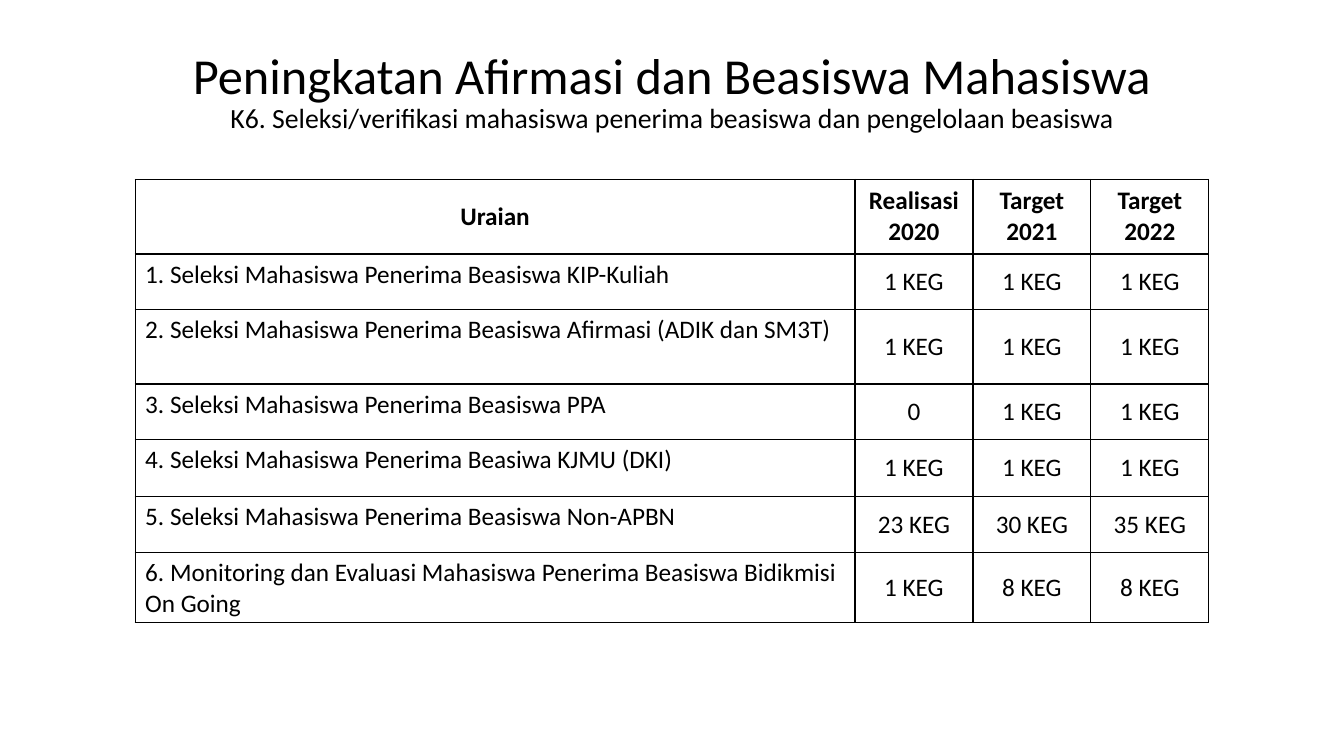
from dataclasses import dataclass

from lxml import etree
from pptx import Presentation
from pptx.dml.color import RGBColor
from pptx.enum.text import MSO_ANCHOR as ANCHOR, PP_ALIGN as ALIGN
from pptx.oxml.ns import qn
from pptx.util import Inches, Pt


@dataclass(frozen=True)
class Theme:
    font: str = "Calibri"
    ink: str = "000000"
    paper: str = "FFFFFF"
    title: float = 36
    subtitle: float = 19.8
    body: float = 18
    border: float = 1


THEME = Theme()

TITLE = "Peningkatan Afirmasi dan Beasiswa Mahasiswa"
SUBTITLE = "K6. Seleksi/verifikasi mahasiswa penerima beasiswa dan pengelolaan beasiswa"
HEADER = ["Uraian", "Realisasi\n2020", "Target\n2021", "Target\n2022"]
ACTIVITIES = [
    ["1. Seleksi Mahasiswa Penerima Beasiswa KIP-Kuliah", "1 KEG", "1 KEG", "1 KEG"],
    ["2. Seleksi Mahasiswa Penerima Beasiswa Afirmasi (ADIK dan SM3T)", "1 KEG", "1 KEG", "1 KEG"],
    ["3. Seleksi Mahasiswa Penerima Beasiswa PPA", "0", "1 KEG", "1 KEG"],
    ["4. Seleksi Mahasiswa Penerima Beasiwa KJMU (DKI)", "1 KEG", "1 KEG", "1 KEG"],
    ["5. Seleksi Mahasiswa Penerima Beasiswa Non-APBN", "23 KEG", "30 KEG", "35 KEG"],
    ["6. Monitoring dan Evaluasi Mahasiswa Penerima Beasiswa Bidikmisi On Going",
     "1 KEG", "8 KEG", "8 KEG"],
]
COL_WIDTHS = [7.14, 1.17, 1.17, 1.17]
ROW_HEIGHTS = [0.74, 0.55, 0.74, 0.55, 0.57, 0.55, 0.55]


def add_run(p, text, size=THEME.body, bold=False):
    r = p.add_run()
    r.text = text
    r.font.name = THEME.font
    r.font.size = Pt(size)
    r.font.bold = bold
    r.font.color.rgb = RGBColor.from_string(THEME.ink)


def set_borders(cell):
    """Draw all four edges; they must come before the cell's fill."""
    tc_pr = cell._tc.get_or_add_tcPr()
    for i, edge in enumerate(("lnL", "lnR", "lnT", "lnB")):
        ln = etree.Element(qn(f"a:{edge}"), w=str(Pt(THEME.border)))
        fill = etree.SubElement(ln, qn("a:solidFill"))
        etree.SubElement(fill, qn("a:srgbClr"), val=THEME.ink)
        tc_pr.insert(i, ln)


def add_heading(slide, left, top, width, height):
    box = slide.shapes.add_textbox(Inches(left), Inches(top), Inches(width), Inches(height))
    tf = box.text_frame
    tf.word_wrap = True
    tf.vertical_anchor = ANCHOR.MIDDLE
    p = tf.paragraphs[0]
    p.alignment = ALIGN.CENTER
    p.line_spacing = 0.9
    add_run(p, TITLE, size=THEME.title)
    p.add_line_break()
    add_run(p, SUBTITLE, size=THEME.subtitle)


def fill_cell(cell, text, header=False, centered=True):
    cell.fill.solid()
    cell.fill.fore_color.rgb = RGBColor.from_string(THEME.paper)
    set_borders(cell)
    cell.vertical_anchor = ANCHOR.MIDDLE if centered else ANCHOR.TOP
    tf = cell.text_frame
    for i, line in enumerate(text.split("\n")):
        p = tf.add_paragraph() if i else tf.paragraphs[0]
        p.alignment = ALIGN.CENTER if centered else ALIGN.LEFT
        add_run(p, line, bold=header)


def add_activity_table(slide, left, top):
    rows = [HEADER] + ACTIVITIES
    frame = slide.shapes.add_table(
        len(rows), len(HEADER), Inches(left), Inches(top),
        Inches(sum(COL_WIDTHS)), Inches(sum(ROW_HEIGHTS)))
    table = frame.table
    table.horz_banding = False
    for col, width in zip(table.columns, COL_WIDTHS):
        col.width = Inches(width)
    for row, height in zip(table.rows, ROW_HEIGHTS):
        row.height = Inches(height)
    for i, values in enumerate(rows):
        for j, text in enumerate(values):
            header = i == 0
            fill_cell(table.cell(i, j), text, header=header, centered=header or j > 0)


def main():
    prs = Presentation()
    prs.slide_width, prs.slide_height = Inches(13.33), Inches(7.5)
    slide = prs.slides.add_slide(prs.slide_layouts[6])
    # Heading above, scholarship activities below
    add_heading(slide, 1.38, 0.38, 10.57, 1.08)
    add_activity_table(slide, 1.34, 1.78)
    prs.save("out.pptx")


if __name__ == "__main__":
    main()
